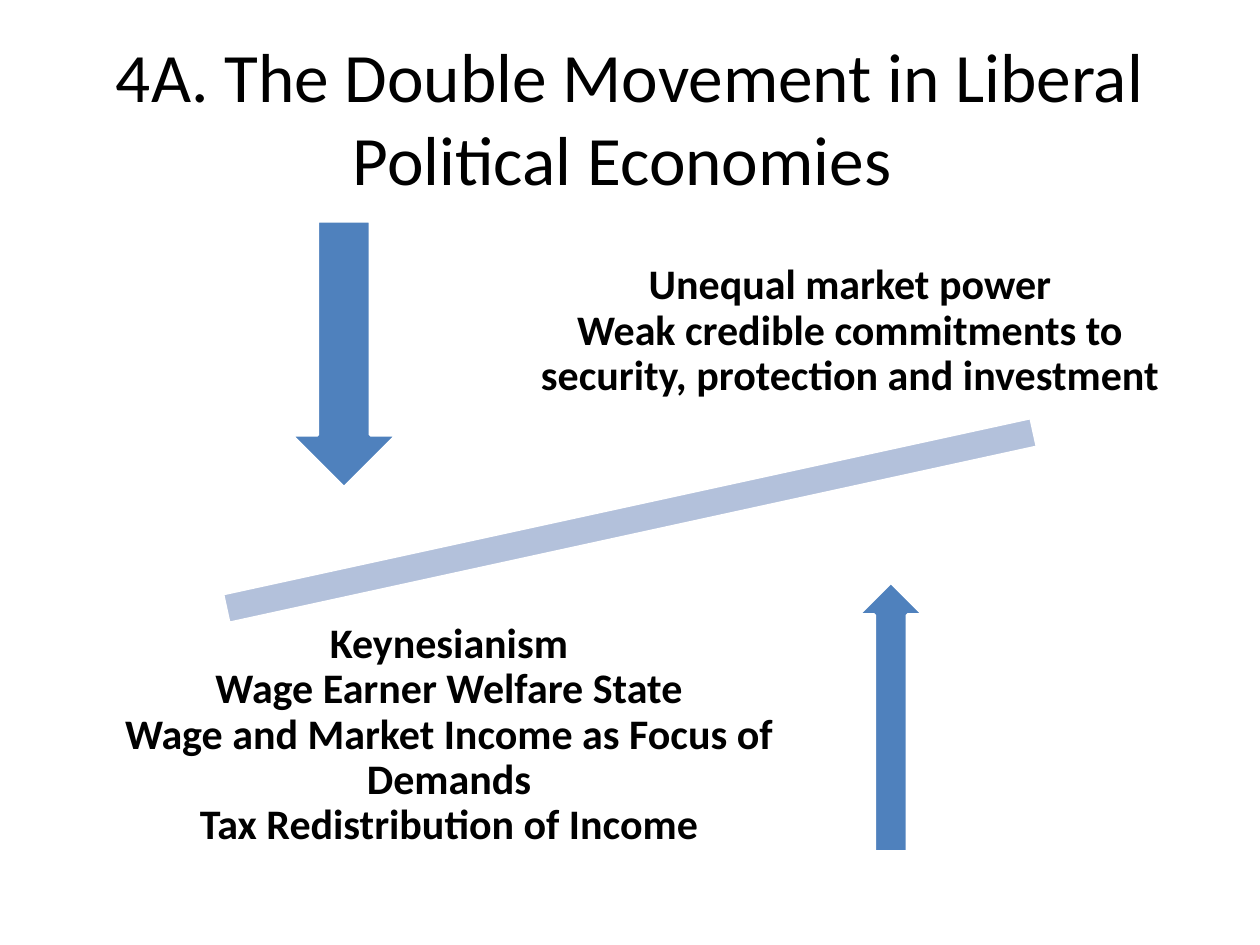
import pptx
import pptx.dml.color
import pptx.enum.shapes
import pptx.enum.text
import pptx.util

PX = 914400 / 126
COLORS = {"text": "000000", "arrow": "4F81BD", "beam": "B3C1DB", "edge": "FFFFFF"}
SHAPE = pptx.enum.shapes.MSO_SHAPE


def px(*lengths):
    return [round(n * PX) for n in lengths]


def rgb(name):
    return pptx.dml.color.RGBColor.from_string(COLORS[name])


def write_text(tf, text, size, bold=False, spacing=None, insets=None):
    tf.word_wrap = True
    tf.auto_size = pptx.enum.text.MSO_AUTO_SIZE.NONE
    tf.vertical_anchor = pptx.enum.text.MSO_ANCHOR.MIDDLE
    if insets:
        tf.margin_left, tf.margin_top, tf.margin_right, tf.margin_bottom = px(*insets)
    p = tf.paragraphs[0]
    p.text = text
    p.alignment = pptx.enum.text.PP_ALIGN.CENTER
    p.line_spacing = spacing
    for r in p.runs:
        r.font.name = "Calibri"
        r.font.size = pptx.util.Pt(size)
        r.font.bold = bold
        r.font.color.rgb = rgb("text")


def add_title(s, box, text):
    sp = s.shapes.title
    sp.left, sp.top, sp.width, sp.height = px(*box)
    write_text(sp.text_frame, text, size=39.6)


def add_figure(s, kind, box, color, rotation=0):
    sp = s.shapes.add_shape(kind, *px(*box))
    sp.shadow.inherit = False
    sp.rotation = rotation
    sp.fill.solid()
    sp.fill.fore_color.rgb = rgb(color)
    sp.line.color.rgb = rgb("edge")
    sp.line.width = pptx.util.Pt(2)


def add_label(s, box, lines, bottom=24):
    tf = s.shapes.add_textbox(*px(*box)).text_frame
    write_text(tf, "\v".join(lines), size=24, bold=True, spacing=0.9,
               insets=(24, 24, 24, bottom))


def main():
    prs = pptx.Presentation()
    prs.slide_width, prs.slide_height = px(1260, 945)
    s = prs.slides.add_slide(prs.slide_layouts[5])
    add_title(s, (63, 38, 1134, 157),
              "4A. The Double Movement in Liberal Political Economies ")
    add_figure(s, SHAPE.MATH_MINUS, (67, 456, 1126, 129), "beam", rotation=347.7)
    add_figure(s, SHAPE.DOWN_ARROW, (291, 221, 106, 267), "arrow")
    add_label(s, (515, 221, 670, 221), [
        "Unequal market power",
        "Weak credible commitments to security, protection and investment",
    ])
    add_figure(s, SHAPE.UP_ARROW, (858, 582, 66, 270), "arrow")
    add_label(s, (54, 609, 790, 281), [
        "Keynesianism",
        "Wage Earner Welfare State",
        "Wage and Market Income as Focus of Demands",
        "Tax Redistribution of Income",
    ], bottom=52)
    prs.save("out.pptx")


if __name__ == "__main__":
    main()
